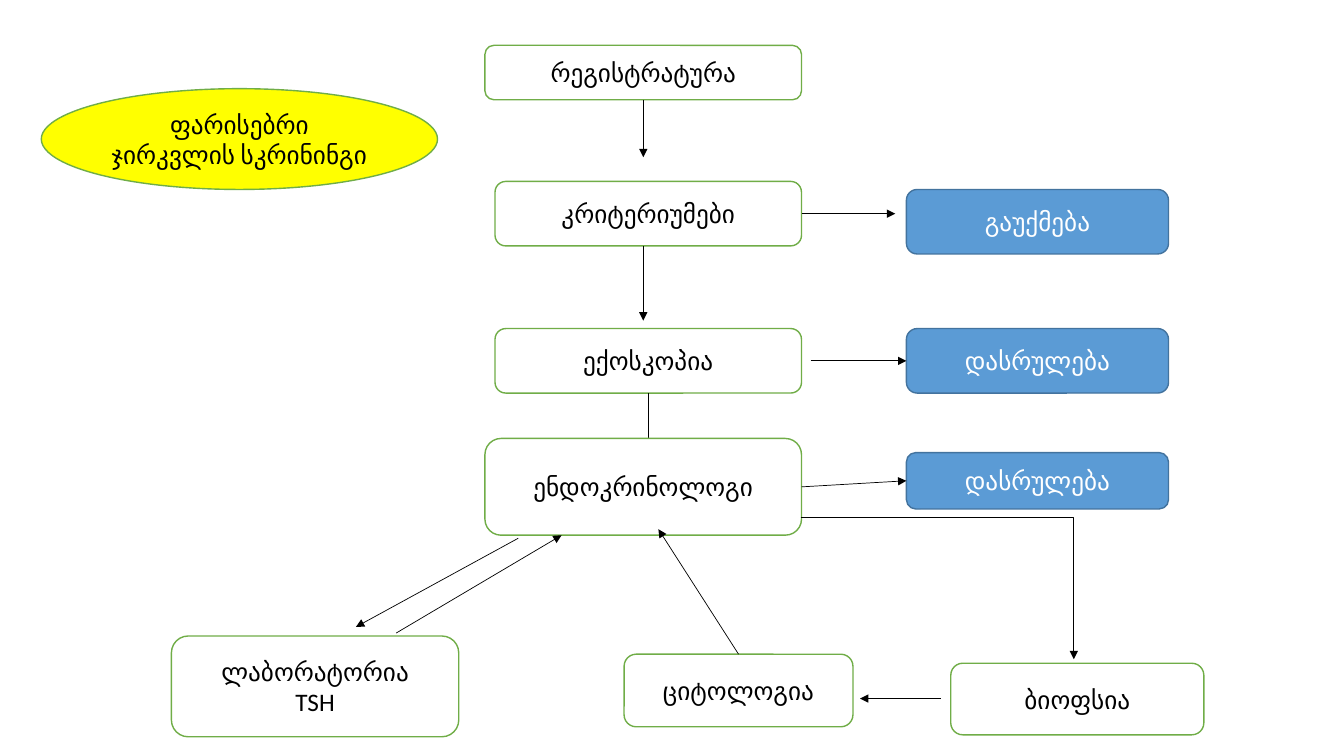
from lxml import etree
from pptx import Presentation
from pptx.dml.color import RGBColor
from pptx.enum import shapes, text
from pptx.oxml.ns import qn
from pptx.util import Inches, Pt

BLACK = RGBColor(0x00, 0x00, 0x00)
WHITE = RGBColor(0xFF, 0xFF, 0xFF)
YELLOW = RGBColor(0xFF, 0xFF, 0x00)
GREEN = RGBColor(0x70, 0xAD, 0x47)
BLUE = RGBColor(0x5B, 0x9B, 0xD5)
DARK_BLUE = RGBColor(0x43, 0x73, 0x9E)

STEP = {"fill": WHITE, "line": GREEN, "font": BLACK}
OUTCOME = {"fill": BLUE, "line": DARK_BLUE, "font": WHITE}
TITLE = {"fill": YELLOW, "line": GREEN, "font": BLACK}

TOP, LEFT, BOTTOM, RIGHT = range(4)

deck = Presentation()
deck.slide_width, deck.slide_height = Inches(13.33), Inches(7.5)
page = deck.slides.add_slide(deck.slide_layouts[6])


def add_box(wording, bounds, style=STEP, kind=shapes.MSO_SHAPE.ROUNDED_RECTANGLE):
    box = page.shapes.add_shape(kind, *map(Inches, bounds))
    box.shadow.inherit = False
    box.fill.solid()
    box.fill.fore_color.rgb = style["fill"]
    box.line.color.rgb = style["line"]
    box.line.width = Pt(1)
    frame = box.text_frame
    frame.word_wrap = True
    frame.vertical_anchor = text.MSO_ANCHOR.MIDDLE
    frame.text = wording
    for para in frame.paragraphs:
        para.alignment = text.PP_ALIGN.CENTER
        font = para.runs[0].font
        for name, value in {"name": "Calibri", "size": Pt(18)}.items():
            setattr(font, name, value)
        font.color.rgb = style["font"]
    return box


def add_arrow(start, end, source=None, target=None, kind=shapes.MSO_CONNECTOR.STRAIGHT):
    """Draw an arrow; source and target are optional (box, side) joints."""
    arrow = page.shapes.add_connector(kind, *map(Inches, start + end))
    arrow.line.color.rgb = BLACK
    arrow.line.width = Pt(0.5)
    if source:
        arrow.begin_connect(*source)
    if target:
        arrow.end_connect(*target)
    properties = arrow._element.spPr
    etree.SubElement(properties.find(qn("a:ln")), qn("a:tailEnd"), type="triangle")
    etree.SubElement(properties, qn("a:effectLst"))
    return arrow


add_box("ფარისებრი ჯირკვლის სკრინინგი", (0.41, 0.88, 3.93, 1), TITLE, shapes.MSO_SHAPE.OVAL)
registry = add_box("რეგისტრატურა", (4.81, 0.45, 3.14, 0.54))
criteria = add_box("კრიტერიუმები", (4.91, 1.8, 3.04, 0.64))
echoscopy = add_box("ექოსკოპია", (4.91, 3.26, 3.04, 0.64))
add_box("გაუქმება", (8.99, 1.88, 2.6, 0.64), OUTCOME)
echoscopy_end = add_box("დასრულება", (8.99, 3.26, 2.6, 0.64), OUTCOME)

add_arrow((6.38, 0.99), (6.38, 1.56), source=(registry, BOTTOM))
add_arrow((7.95, 2.12), (8.88, 2.12), source=(criteria, RIGHT))
add_arrow((6.38, 2.44), (6.38, 3.18))
add_arrow((8.04, 3.58), (8.99, 3.58), target=(echoscopy_end, LEFT))

# The endocrinologist box covers the head of the arrow that leads to it.
add_arrow((6.43, 3.9), (6.43, 4.43), source=(echoscopy, BOTTOM))
endocrinologist = add_box("ენდოკრინოლოგი", (4.81, 4.35, 3.14, 0.96))
consultation_end = add_box("დასრულება", (8.99, 4.49, 2.6, 0.56), OUTCOME)
add_box("ლაბორატორია\nTSH", (1.7, 6.31, 2.85, 1))
cytology = add_box("ციტოლოგია", (6.19, 6.49, 2.27, 0.72))
add_box("ბიოფსია", (9.43, 6.58, 2.51, 0.71))

add_arrow((7.95, 4.83), (8.99, 4.77), (endocrinologist, RIGHT), (consultation_end, LEFT))
add_arrow((5.14, 5.34), (3.53, 6.22))
add_arrow((3.93, 6.28), (5.57, 5.31))
add_arrow((9.33, 6.93), (8.53, 6.93))
add_arrow((7.32, 6.49), (6.53, 5.25), source=(cytology, TOP))

# A single right-angle bend leads down to the biopsy.
to_biopsy = add_arrow((7.94, 5.13), (10.65, 6.54), kind=shapes.MSO_CONNECTOR.ELBOW)
to_biopsy._element.spPr.find(qn("a:prstGeom")).set("prst", "bentConnector2")

deck.save("out.pptx")
